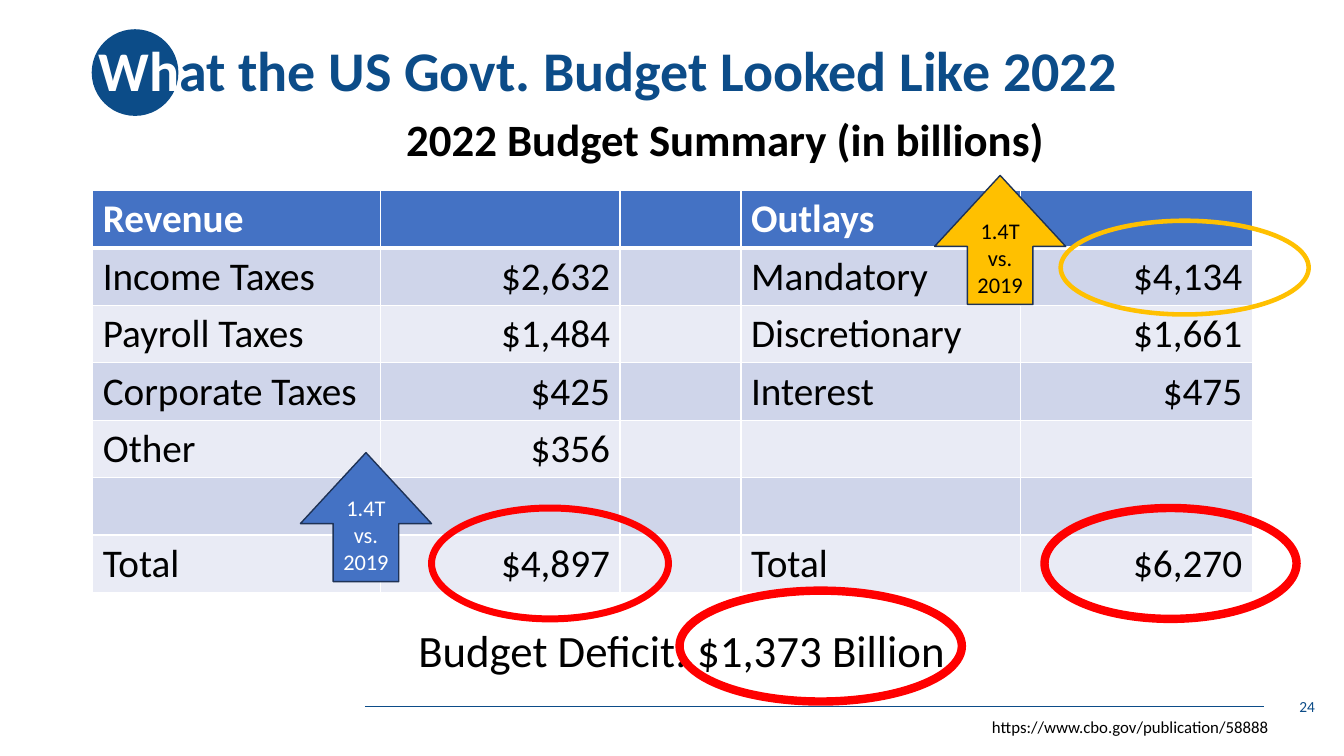
import pptx
import pptx.util
import pptx.dml.color
import pptx.enum.shapes
import pptx.enum.text
import pptx.oxml
import pptx.oxml.ns

Inches, Pt = pptx.util.Inches, pptx.util.Pt
RGBColor = pptx.dml.color.RGBColor
SHAPE = pptx.enum.shapes.MSO_SHAPE
ALIGN = pptx.enum.text.PP_ALIGN
ANCHOR = pptx.enum.text.MSO_ANCHOR
qn = pptx.oxml.ns.qn

NAVY = RGBColor(0x0C, 0x4C, 0x88)
BLUE = RGBColor(0x44, 0x72, 0xC4)
OUTLINE = RGBColor(0x1E, 0x32, 0x56)
GOLD = RGBColor(0xFF, 0xC0, 0x00)
RED = RGBColor(0xFF, 0x00, 0x00)
BAND_DARK = RGBColor(0xCF, 0xD5, 0xEA)
BAND_LIGHT = RGBColor(0xE9, 0xEB, 0xF5)
WHITE = RGBColor(0xFF, 0xFF, 0xFF)
BLACK = RGBColor(0, 0, 0)
FONT = "Calibri"

COLUMN_WIDTHS = [2.85, 2.38, 1.2, 2.77, 2.3]
ROW_HEIGHT = 0.57
BUDGET = [
    ["Revenue", "", "", "Outlays", ""],
    ["Income Taxes", "$2,632", "", "Mandatory", "$4,134"],
    ["Payroll Taxes", "$1,484", "", "Discretionary", "$1,661"],
    ["Corporate Taxes", "$425", "", "Interest", "$475"],
    ["Other", "$356", "", "", ""],
    ["", "", "", "", ""],
    ["Total", "$4,897", "", "Total", "$6,270"],
]
AMOUNT_COLUMNS = (1, 4)


def add_run(p, text, size, color, bold=False):
    r = p.add_run()
    r.text = text
    for name, value in dict(name=FONT, size=Pt(size), bold=bold).items():
        setattr(r.font, name, value)
    r.font.color.rgb = color


def add_text(s, box, runs, size, bold=False, align=ALIGN.LEFT, anchor=ANCHOR.TOP, wrap=False):
    """Place one paragraph made of (text, color) runs and return it."""
    tf = s.shapes.add_textbox(*map(Inches, box)).text_frame
    tf.word_wrap = wrap
    tf.vertical_anchor = anchor
    p = tf.paragraphs[0]
    p.alignment = align
    for text, color in runs:
        add_run(p, text, size, color, bold)
    return p


def add_figure(s, kind, box, fill=None, line=None, width=1):
    sp = s.shapes.add_shape(kind, *map(Inches, box))
    sp.shadow.inherit = False
    if fill is None:
        sp.fill.background()
    else:
        sp.fill.solid()
        sp.fill.fore_color.rgb = fill
    if line is None:
        sp.line.fill.background()
    else:
        sp.line.color.rgb = line
        sp.line.width = Pt(width)
    return sp


def add_header(s, box):
    left, top, width, height = box
    add_figure(s, SHAPE.OVAL, (left + 0.03, top + 0.29, 0.86, 0.86), NAVY)
    p = add_text(s, box, [("Wh", WHITE), ("at the US Govt. Budget Looked Like 2022", NAVY)],
                 40, bold=True, anchor=ANCHOR.MIDDLE, wrap=True)
    p.line_spacing = 0.9
    add_text(s, (left + 3.05, top + 1.06, 6.59, 0.64),
             [("2022 Budget Summary (in billions)", BLACK)], 32, bold=True)


def add_footer(s, box):
    left, top, width, height = box
    rule = s.shapes.add_connector(pptx.enum.shapes.MSO_CONNECTOR.STRAIGHT, *map(
        Inches, (left, top + 0.2, left + 8.92, top + 0.2)))
    rule.line.color.rgb = NAVY
    rule.line.width = Pt(0.5)
    rule._element.spPr.append(pptx.oxml.parse_xml(
        '<a:effectLst xmlns:a="http://schemas.openxmlformats.org/drawingml/2006/main"/>'))
    add_text(s, (left + width - 3, top, 3, 0.4), [("24", NAVY)], 11,
             align=ALIGN.RIGHT, anchor=ANCHOR.MIDDLE, wrap=True)
    add_text(s, (left + 6.12, top + 0.25, 2.98, 0.3),
             [("https://www.cbo.gov/publication/58888", BLACK)], 12)


def set_borders(cell, widths):
    """Draw white cell borders; widths maps a side (L, R, T, B) to points."""
    tcPr = cell._tc.get_or_add_tcPr()
    for side, width in widths.items():
        ln = tcPr.makeelement(qn(f"a:ln{side}"), {"w": str(Pt(width))})
        fill = ln.makeelement(qn("a:solidFill"), {})
        fill.append(fill.makeelement(qn("a:srgbClr"), {"val": str(WHITE)}))
        ln.append(fill)
        tcPr.append(ln)


def add_budget_table(s, left, top):
    size = (sum(COLUMN_WIDTHS), ROW_HEIGHT * len(BUDGET))
    table = s.shapes.add_table(len(BUDGET), len(COLUMN_WIDTHS),
                               *map(Inches, (left, top) + size)).table
    for column, width in zip(table.columns, COLUMN_WIDTHS):
        column.width = Inches(width)
    for i, texts in enumerate(BUDGET):
        table.rows[i].height = Inches(ROW_HEIGHT)
        header = i == 0
        fill = BLUE if header else BAND_DARK if i % 2 else BAND_LIGHT
        for j, text in enumerate(texts):
            cell = table.cell(i, j)
            set_borders(cell, dict(L=1, R=1, T=3 if i == 1 else 1, B=3 if header else 1))
            cell.fill.solid()
            cell.fill.fore_color.rgb = fill
            p = cell.text_frame.paragraphs[0]
            if j in AMOUNT_COLUMNS:
                p.alignment = ALIGN.RIGHT
            if text:
                add_run(p, text, 28, WHITE if header else BLACK, header)


def add_growth_arrow(s, left, top, fill, color):
    sp = add_figure(s, SHAPE.UP_ARROW, (left, top, 1.3, 1.28), fill, OUTLINE)
    sp.adjustments[0], sp.adjustments[1] = 0.5, 0.55
    tf = sp.text_frame
    tf.word_wrap = True
    tf.vertical_anchor = ANCHOR.MIDDLE
    tf.margin_left = tf.margin_right = Inches(0.05)
    p = tf.paragraphs[0]
    p.alignment = ALIGN.CENTER
    add_run(p, "1.4T vs. 2019", 16, color)


def add_highlights(s):
    for box, color, width in [
        ((4.28, 5.04, 2.35, 1.1), RED, 5),
        ((10.36, 5.04, 2.5, 1.1), RED, 6),
        ((6.74, 5.86, 2.8, 1.1), RED, 6),
        ((10.52, 2.19, 2.46, 0.93), GOLD, 3.25),
    ]:
        add_figure(s, SHAPE.OVAL, box, line=color, width=width)
    add_growth_arrow(s, 2.98, 4.49, BLUE, WHITE)
    add_growth_arrow(s, 9.27, 1.74, GOLD, BLACK)


def main():
    prs = pptx.Presentation()
    prs.slide_width, prs.slide_height = Inches(13.33), Inches(7.5)
    s = prs.slides.add_slide(prs.slide_layouts[6])
    add_header(s, (0.88, 0, 11.5, 1.45))
    add_footer(s, (3.62, 6.81, 9.52, 0.55))
    add_budget_table(s, 0.92, 1.89)
    add_text(s, (4.05, 6.13, 5.49, 0.64), [("Budget Deficit: $1,373 Billion", BLACK)], 32)
    add_highlights(s)
    prs.save("out.pptx")


if __name__ == "__main__":
    main()
